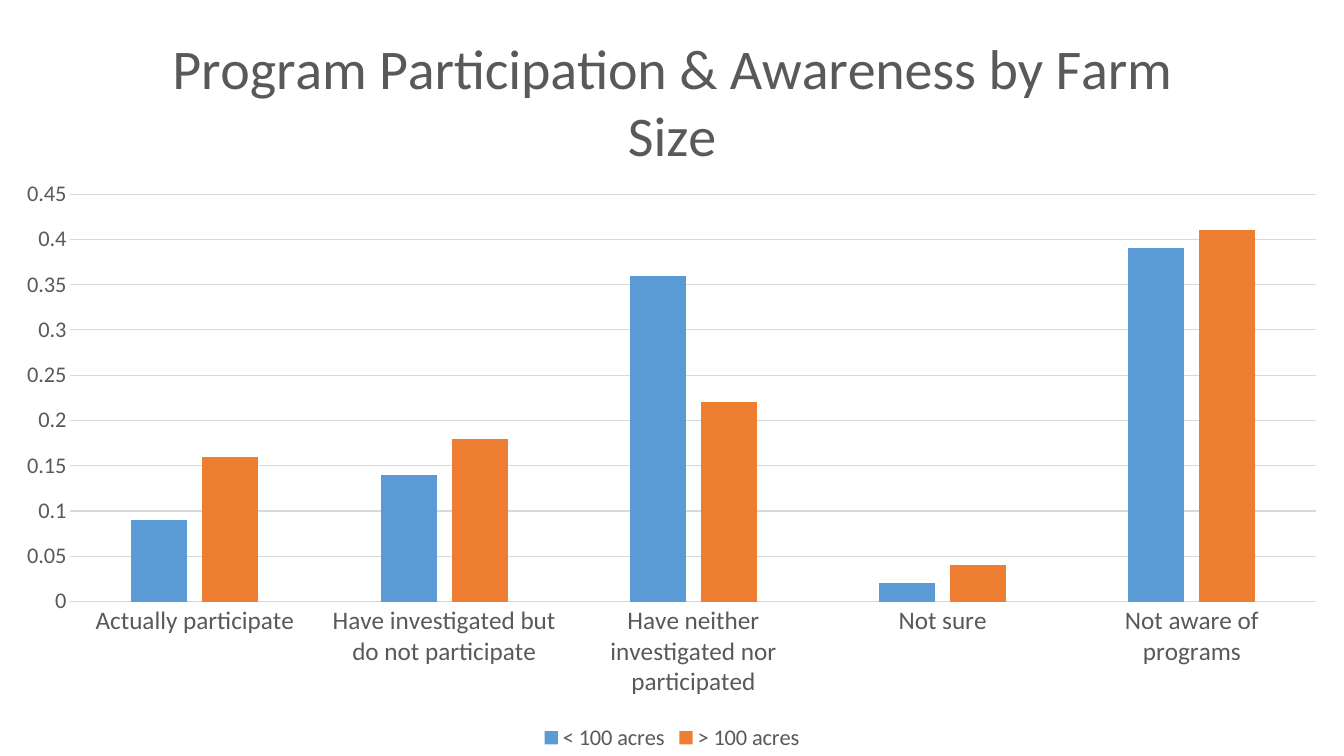
import pptx
import pptx.chart.data
import pptx.dml.color
import pptx.enum.chart
import pptx.oxml
import pptx.oxml.ns
import pptx.util

PX = 9525
W, H = 1280, 720
GREY, GRID = "595959", "D9D9D9"
CATEGORIES = [
    "Actually participate",
    "Have investigated but do not participate",
    "Have neither investigated nor participated",
    "Not sure",
    "Not aware of programs",
]
SERIES = [
    ("< 100 acres", "5B9BD5", (0.09, 0.14, 0.36, 0.02, 0.39)),
    ("> 100 acres", "ED7D31", (0.16, 0.18, 0.22, 0.04, 0.41)),
]


def rgb(color):
    """Turn a hex string into a colour."""
    return pptx.dml.color.RGBColor.from_string(color)


def set_attrs(obj, values):
    """Set each attribute of an object from a dict."""
    for name, value in values.items():
        setattr(obj, name, value)


def format_font(font, size):
    """Apply the chart's typeface and grey at a point size."""
    set_attrs(font, {"name": "Calibri", "size": pptx.util.Pt(size), "bold": False})
    font.color.rgb = rgb(GREY)


def format_line(line):
    """Give a line the thin light grey of the grid."""
    line.color.rgb = rgb(GRID)
    line.width = pptx.util.Pt(0.75)


def place_plot(chart, box, plot_box):
    """Fix the inner plot area within the chart's box."""
    x, y, w, h = box
    px, py, pw, ph = plot_box
    parts = {"x": (px - x) / w, "y": (py - y) / h, "w": pw / w, "h": ph / h}
    modes = '<c:layoutTarget val="inner"/><c:xMode val="edge"/><c:yMode val="edge"/>'
    sizes = "".join(f'<c:{k} val="{v:.4f}"/>' for k, v in parts.items())
    layout = pptx.oxml.parse_xml(
        f'<c:layout {pptx.oxml.ns.nsdecls("c")}><c:manualLayout>'
        f"{modes}{sizes}</c:manualLayout></c:layout>"
    )
    area = chart._chartSpace.chart.plotArea
    for old in area.findall(pptx.oxml.ns.qn("c:layout")):
        area.remove(old)
    area.insert(0, layout)


def format_axes(chart):
    """Style both axes and the gridlines."""
    ticks = pptx.enum.chart.XL_TICK_MARK.NONE
    for axis, size in ((chart.category_axis, 18), (chart.value_axis, 16)):
        set_attrs(axis, {"major_tick_mark": ticks, "minor_tick_mark": ticks})
        format_font(axis.tick_labels.font, size)
    format_line(chart.category_axis.format.line)
    axis = chart.value_axis
    set_attrs(axis, {"minimum_scale": 0, "maximum_scale": 0.45, "major_unit": 0.05})
    axis.format.line.fill.background()
    format_line(axis.major_gridlines.format.line)


def add_participation_chart(slide, box):
    """Draw the titled column chart in the given box."""
    data = pptx.chart.data.CategoryChartData()
    data.categories = CATEGORIES
    for name, _, values in SERIES:
        data.add_series(name, values)
    kind = pptx.enum.chart.XL_CHART_TYPE.COLUMN_CLUSTERED
    chart = slide.shapes.add_chart(kind, *(v * PX for v in box), data).chart
    format_font(chart.font, 10)

    tf = chart.chart_title.text_frame
    r = tf.paragraphs[0].add_run()
    r.text = "Program Participation & Awareness by Farm Size"
    format_font(r.font, 40)
    chart.chart_title.include_in_layout = False

    chart.has_legend = True
    bottom = pptx.enum.chart.XL_LEGEND_POSITION.BOTTOM
    set_attrs(chart.legend, {"position": bottom, "include_in_layout": False})
    format_font(chart.legend.font, 16)

    plot = chart.plots[0]
    set_attrs(plot, {"gap_width": 219, "overlap": -27, "vary_by_categories": False})
    for series, (_, color, _) in zip(plot.series, SERIES):
        series.format.fill.solid()
        series.format.fill.fore_color.rgb = rgb(color)
    format_axes(chart)
    x, y, w, h = box
    place_plot(chart, box, (x + 67, y + 185, w - 93, h - 332))


def main():
    """Build and save the slide."""
    prs = pptx.Presentation()
    set_attrs(prs, {"slide_width": W * PX, "slide_height": H * PX})
    slide = prs.slides.add_slide(prs.slide_layouts.get_by_name("Blank"))
    add_participation_chart(slide, (0, 0, W, H))
    prs.save("out.pptx")


if __name__ == "__main__":
    main()
